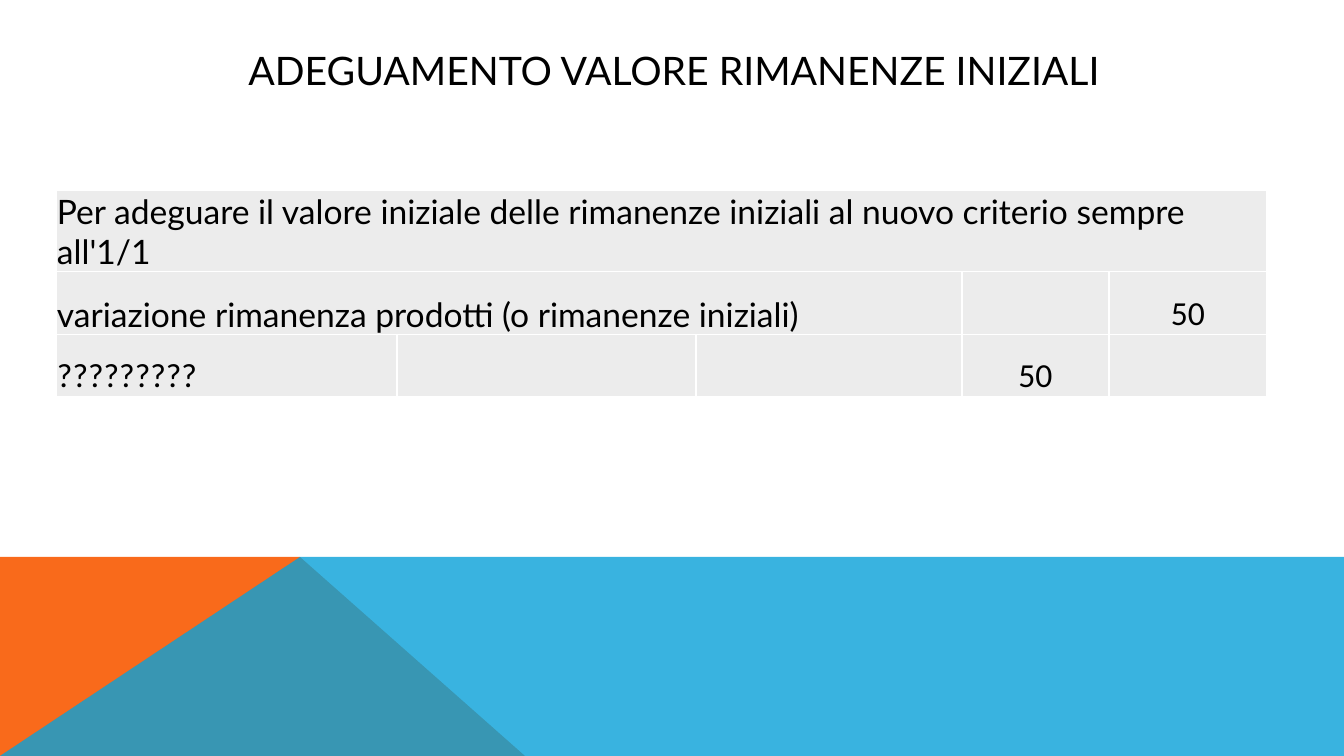
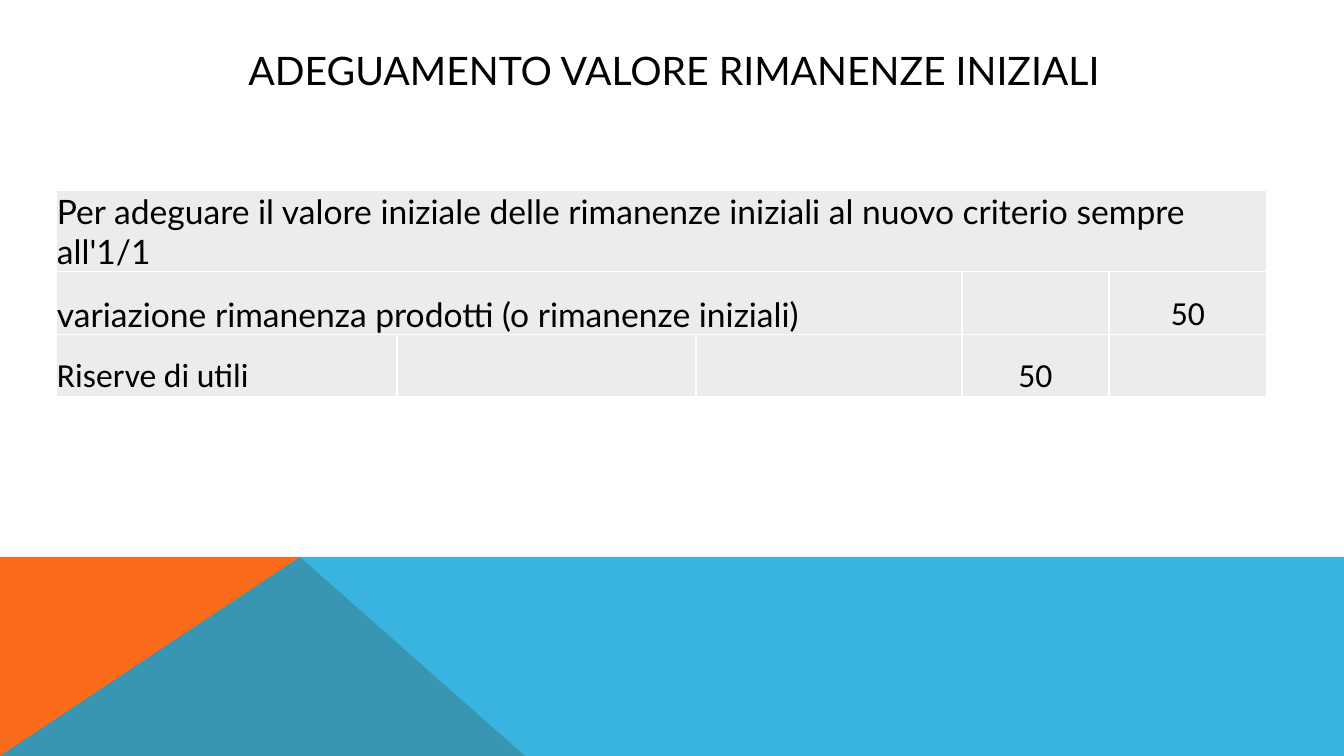
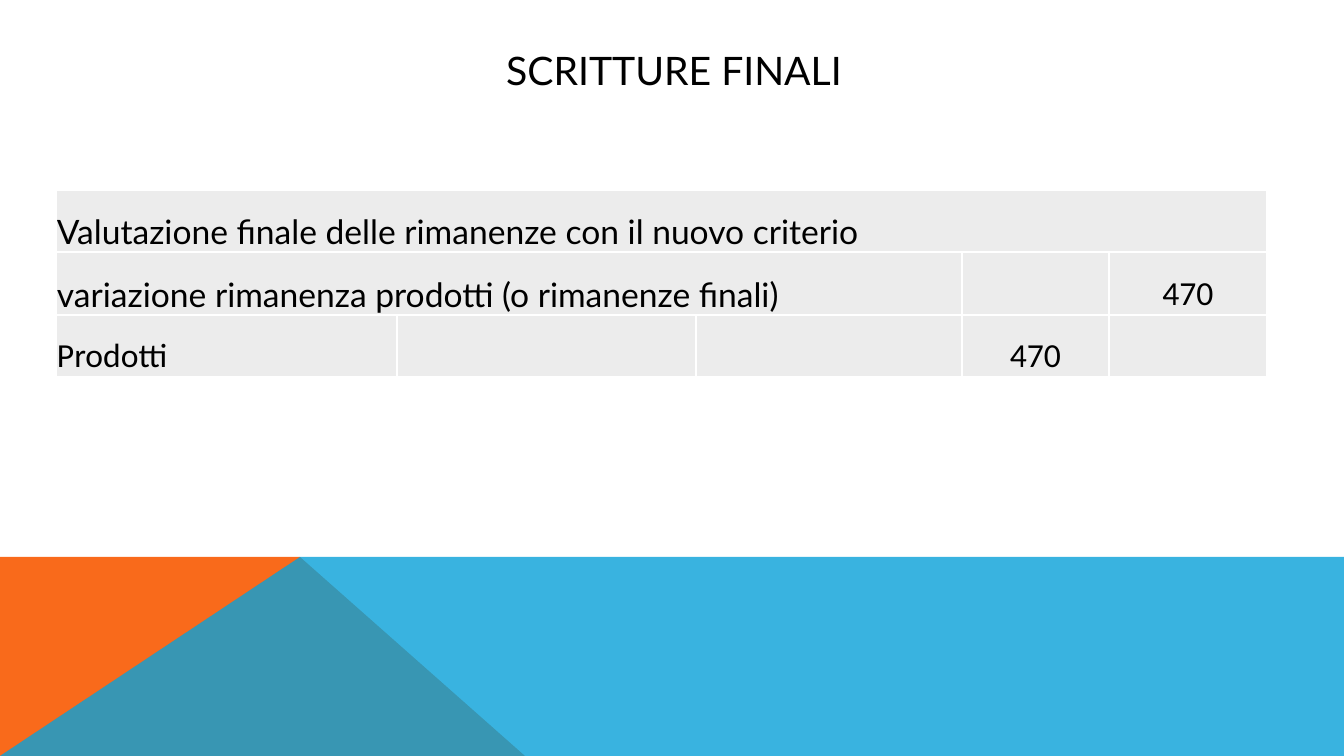
from dataclasses import dataclass

from lxml.etree import SubElement
from pptx import Presentation
from pptx.dml.color import RGBColor
from pptx.dml.fill import FillFormat
from pptx.enum.text import MSO_VERTICAL_ANCHOR as Anchor, PP_PARAGRAPH_ALIGNMENT as Align
from pptx.oxml import parse_xml
from pptx.oxml.ns import nsdecls, qn
from pptx.slide import Slide
from pptx.table import Table, _Cell as Cell
from pptx.text.text import TextFrame
from pptx.util import Emu, Pt

SLIDE_WIDTH, SLIDE_HEIGHT = 1344, 756
EMU_PER_PX = 12192000 / SLIDE_WIDTH

BLACK = "000000"
WHITE = "FFFFFF"
ORANGE = "F96A1B"
BLUE = "08A1D9"
CELL_GREY = "ECECEC"

HEADING_FONT = "Lato"
FIGURE_FONT = "Calibri"
TITLE_SIZE = 28
ENTRY_SIZE = 24

BAND_TOP = 557
BAND_PEAK = 300
TABLE_LEFT, TABLE_TOP = 56, 190
COLUMN_WIDTHS = (341, 299, 266, 147, 158)
ROW_HEIGHTS = (62, 63, 62)


@dataclass(frozen=True)
class Band:
    points: tuple[tuple[int, int], ...]
    colour: str
    opacity: int = 100


@dataclass(frozen=True)
class Entry:
    row: int
    column: int
    text: str
    font: str
    align: Align = Align.LEFT


@dataclass(frozen=True)
class JournalSlide:
    title: str
    description: str
    credit_account: str
    debit_account: str
    amount: str

    def entries(self) -> tuple[Entry, ...]:
        return (
            Entry(0, 0, self.description, HEADING_FONT),
            Entry(1, 0, self.credit_account, HEADING_FONT),
            Entry(1, 4, self.amount, FIGURE_FONT, Align.CENTER),
            Entry(2, 0, self.debit_account, FIGURE_FONT),
            Entry(2, 3, self.amount, FIGURE_FONT, Align.CENTER),
        )


BANDS = (
    Band(((0, SLIDE_HEIGHT), (0, BAND_TOP), (BAND_PEAK, BAND_TOP), (525, SLIDE_HEIGHT)), ORANGE),
    Band(
        (
            (0, SLIDE_HEIGHT),
            (BAND_PEAK, BAND_TOP),
            (SLIDE_WIDTH, BAND_TOP),
            (SLIDE_WIDTH, SLIDE_HEIGHT),
        ),
        BLUE,
        80,
    ),
)

ADJUSTMENT_TITLE = "ADEGUAMENTO VALORE RIMANENZE INIZIALI"
ADJUSTMENT_TEXT = (
    "Per adeguare il valore iniziale delle rimanenze iniziali al nuovo criterio sempre all'1/1"
)
OPENING_STOCK = "variazione rimanenza prodotti (o rimanenze iniziali)"

JOURNAL_SLIDES = (
    JournalSlide(ADJUSTMENT_TITLE, ADJUSTMENT_TEXT, OPENING_STOCK, "?????????", "50"),
    JournalSlide(ADJUSTMENT_TITLE, ADJUSTMENT_TEXT, OPENING_STOCK, "Riserve di utili", "50"),
    JournalSlide(
        "SCRITTURE FINALI",
        "Valutazione finale delle rimanenze con il nuovo criterio",
        "variazione rimanenza prodotti (o rimanenze finali)",
        "Prodotti",
        "470",
    ),
)


def px(length: int) -> Emu:
    return Emu(round(length * EMU_PER_PX))


def paint(fill: FillFormat, colour: str) -> None:
    fill.solid()
    fill.fore_color.rgb = RGBColor.from_string(colour)


def write(frame: TextFrame, text: str, font: str, size: int, align: Align) -> None:
    frame.text = text
    paragraph = frame.paragraphs[0]
    paragraph.alignment = align
    for run in paragraph.runs:
        run.font.name = font
        run.font.size = Pt(size)
        run.font.bold = False
        paint(run.font.fill, BLACK)


def draw_band(slide: Slide, band: Band) -> None:
    builder = slide.shapes.build_freeform(*band.points[0], scale=EMU_PER_PX)
    builder.add_line_segments(band.points[1:], close=True)
    shape = builder.convert_to_shape()
    shape.shadow.inherit = False
    shape.line.fill.background()
    paint(shape.fill, band.colour)
    if band.opacity < 100:
        for colour in shape.element.spPr.iter(qn("a:srgbClr")):
            SubElement(colour, qn("a:alpha"), val=str(band.opacity * 1000))


def draw_title(slide: Slide, text: str) -> None:
    frame = slide.shapes.add_textbox(px(121), px(40), px(1106), px(60)).text_frame
    frame.word_wrap = True
    frame.vertical_anchor = Anchor.MIDDLE
    write(frame, text, HEADING_FONT, TITLE_SIZE, Align.CENTER)


def style_cell(cell: Cell) -> None:
    cell.vertical_anchor = Anchor.BOTTOM
    cell.margin_left = cell.margin_right = cell.margin_top = px(1)
    cell.margin_bottom = 0
    paint(cell.fill, CELL_GREY)
    properties = cell._tc.get_or_add_tcPr()
    for index, side in enumerate(("lnL", "lnR", "lnT", "lnB")):
        border = parse_xml(
            f'<a:{side} {nsdecls("a")} w="{Pt(1)}"><a:solidFill>'
            f'<a:srgbClr val="{WHITE}"/></a:solidFill></a:{side}>'
        )
        properties.insert(index, border)


def add_journal_table(slide: Slide) -> Table:
    table = slide.shapes.add_table(
        len(ROW_HEIGHTS),
        len(COLUMN_WIDTHS),
        px(TABLE_LEFT),
        px(TABLE_TOP),
        px(sum(COLUMN_WIDTHS)),
        px(sum(ROW_HEIGHTS)),
    ).table
    table.first_row = False
    table.horz_banding = False
    for column, width in zip(table.columns, COLUMN_WIDTHS):
        column.width = px(width)
    for row, height in zip(table.rows, ROW_HEIGHTS):
        row.height = px(height)
    for cell in table.iter_cells():
        style_cell(cell)
    table.cell(0, 0).merge(table.cell(0, 4))
    table.cell(1, 0).merge(table.cell(1, 2))
    return table


def draw_slide(slide: Slide, journal: JournalSlide) -> None:
    for band in BANDS:
        draw_band(slide, band)
    draw_title(slide, journal.title)
    table = add_journal_table(slide)
    for entry in journal.entries():
        frame = table.cell(entry.row, entry.column).text_frame
        write(frame, entry.text, entry.font, ENTRY_SIZE, entry.align)


def main() -> None:
    presentation = Presentation()
    presentation.slide_width = px(SLIDE_WIDTH)
    presentation.slide_height = px(SLIDE_HEIGHT)
    blank_layout = presentation.slide_layouts[6]
    for journal in JOURNAL_SLIDES:
        draw_slide(presentation.slides.add_slide(blank_layout), journal)
    presentation.save("out.pptx")


if __name__ == "__main__":
    main()
